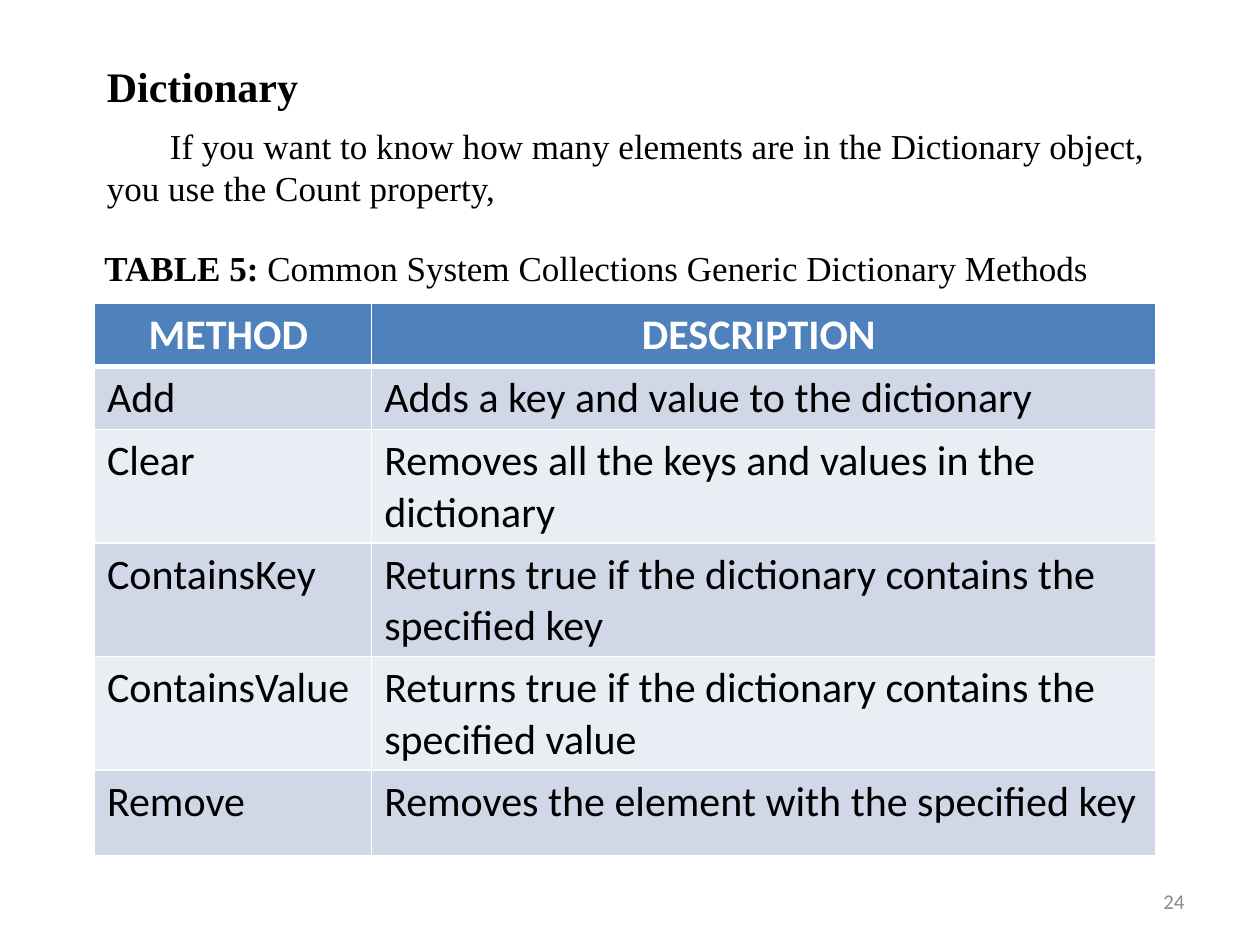
import pptx
import pptx.util
import pptx.dml.color
import pptx.enum.text
import pptx.oxml

Inches = pptx.util.Inches
Align = pptx.enum.text.PP_ALIGN
Anchor = pptx.enum.text.MSO_ANCHOR

COLORS = {
    "text": "000000",
    "header": "4F81BD",
    "odd": "D0D8E8",
    "even": "E9EDF4",
    "white": "FFFFFF",
    "number": "8C8C8C",
}
SERIF = "Times New Roman"
SANS = "Calibri"
METHODS = [
    ("METHOD ", "DESCRIPTION "),
    ("Add", "Adds a key and value to the dictionary"),
    ("Clear", "Removes all the keys and values in the dictionary"),
    ("ContainsKey", "Returns true if the dictionary contains the specified key"),
    ("ContainsValue", "Returns true if the dictionary contains the specified value"),
    ("Remove", "Removes the element with the specified key"),
]


def add_run(paragraph, text, font=SERIF, size=20, color="text", bold=False):
    run = paragraph.add_run()
    run.text = text
    run.font.name = font
    run.font.size = pptx.util.Pt(size)
    run.font.bold = bold
    run.font.color.rgb = pptx.dml.color.RGBColor.from_string(COLORS[color])


class SlideBuilder:
    """Hold the slide and its style, and add each kind of element."""

    def __init__(self, slide):
        self.slide = slide

    def text(self, left, top, width, height, runs, wrap=True, indent=0,
             align=Align.LEFT, anchor=Anchor.TOP):
        shape = self.slide.shapes.add_textbox(
            Inches(left), Inches(top), Inches(width), Inches(height))
        frame = shape.text_frame
        frame.word_wrap = wrap
        frame.vertical_anchor = anchor
        paragraph = frame.paragraphs[0]
        paragraph.alignment = align
        if indent:
            properties = paragraph._p.get_or_add_pPr()
            properties.set("marL", "0")
            properties.set("indent", str(Inches(indent)))
        for text, style in runs:
            add_run(paragraph, text, **style)

    def borders(self, cell, top, bottom):
        properties = cell._tc.get_or_add_tcPr()
        for side, width in (("L", 1), ("R", 1), ("T", top), ("B", bottom)):
            properties.append(pptx.oxml.parse_xml(
                '<a:ln%s xmlns:a="http://schemas.openxmlformats.org/drawingml/2006/main"'
                ' w="%d"><a:solidFill><a:srgbClr val="%s"/></a:solidFill></a:ln%s>'
                % (side, pptx.util.Pt(width), COLORS["white"], side)))

    def table(self, left, top, widths, heights, rows):
        table = self.slide.shapes.add_table(
            len(rows), len(widths), Inches(left), Inches(top),
            Inches(sum(widths)), Inches(sum(heights))).table
        for column, width in zip(table.columns, widths):
            column.width = Inches(width)
        for index, (row, height) in enumerate(zip(table.rows, heights)):
            row.height = Inches(height)
            header = index == 0
            fill = "header" if header else ("even", "odd")[index % 2]
            for cell, text in zip(row.cells, rows[index]):
                self.borders(cell, 3 if index == 1 else 1, 3 if header else 1)
                cell.fill.solid()
                cell.fill.fore_color.rgb = pptx.dml.color.RGBColor.from_string(COLORS[fill])
                paragraph = cell.text_frame.paragraphs[0]
                paragraph.alignment = Align.CENTER if header else Align.LEFT
                add_run(paragraph, text, font=SANS, size=24, bold=header,
                        color="white" if header else "text")


def main():
    presentation = pptx.Presentation()
    presentation.slide_width = Inches(10)
    presentation.slide_height = Inches(7.5)
    builder = SlideBuilder(presentation.slides.add_slide(presentation.slide_layouts[6]))
    builder.text(0.75, 0.94, 8.66, 0.77, [
        ("If you want to know how many elements are in the Dictionary object, "
         "you use the Count property,", {})], indent=0.5)
    builder.text(0.75, 0.43, 1.82, 0.5,
                 [("Dictionary", {"size": 24, "bold": True})], wrap=False)
    builder.text(0.73, 1.91, 8.44, 0.44, [
        ("TABLE 5: ", {"bold": True}),
        ("Common System Collections Generic Dictionary Methods", {})])
    builder.table(0.75, 2.41, [2.2, 6.22], [0.5, 0.5, 0.9, 0.9, 0.9, 0.68], METHODS)
    builder.text(7.17, 6.95, 2.33, 0.4,
                 [("24", {"font": SANS, "size": 12, "color": "number"})],
                 align=Align.RIGHT, anchor=Anchor.MIDDLE)
    presentation.save("out.pptx")


if __name__ == "__main__":
    main()
